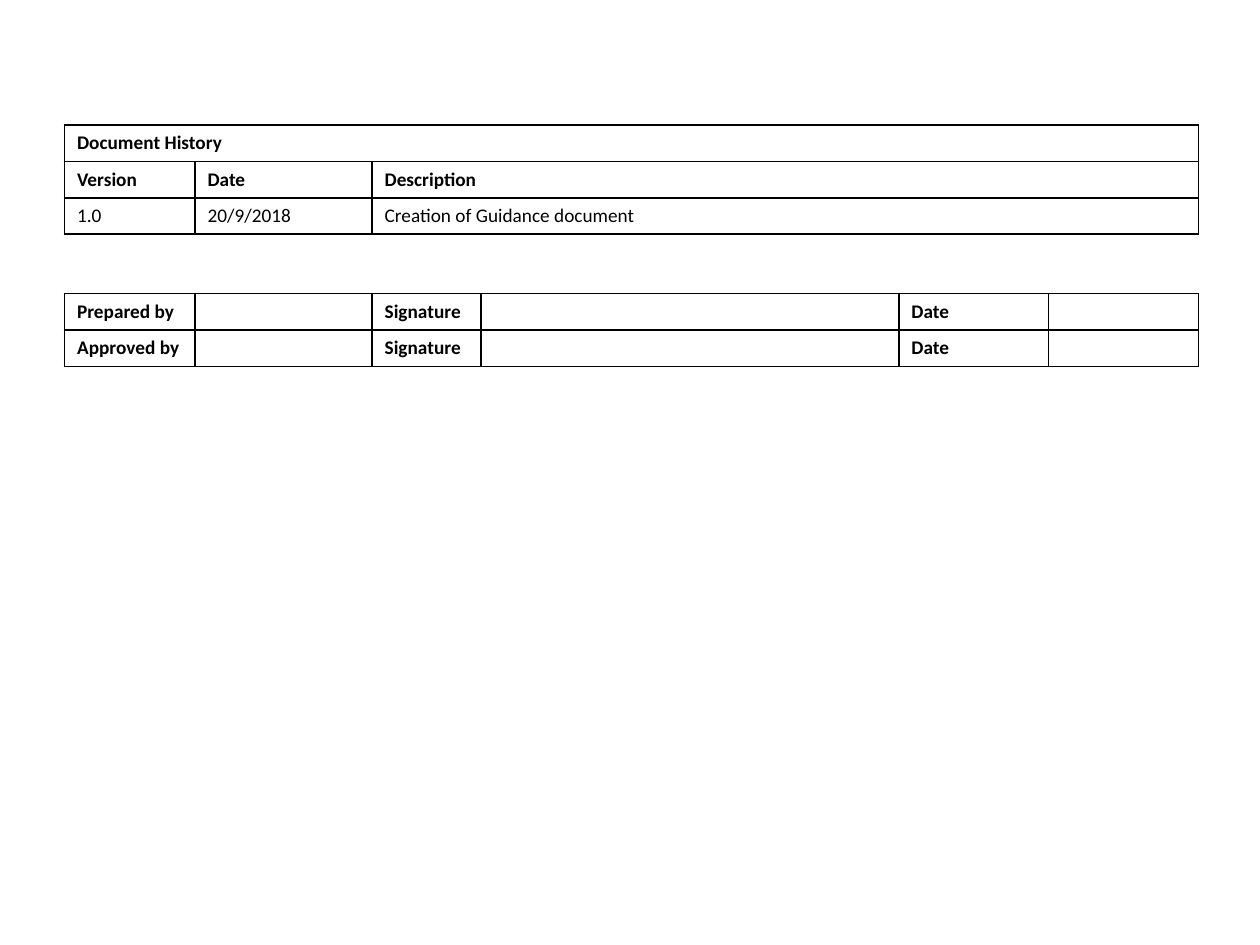
from lxml.etree import SubElement
from pptx import Presentation
from pptx.dml.color import RGBColor
from pptx.oxml.ns import qn
from pptx.util import Cm, Pt

BLACK = RGBColor(0x00, 0x00, 0x00)

LEFT = 1.3
ROW_HEIGHT = 0.73
LABEL_WIDTH, DATE_WIDTH = 2.63, 3.57

HISTORY_WIDTHS = [LABEL_WIDTH, DATE_WIDTH, 16.66]
HISTORY = [
    ["Document History", "", ""],
    ["Version", "Date", "Description"],
    ["1.0", "20/9/2018", "Creation of Guidance document"],
]
SIGN_OFF_WIDTHS = [LABEL_WIDTH, DATE_WIDTH, 2.2, 8.42, 3.02, 3.02]
SIGN_OFF = [
    [label, "", "Signature", "", "Date", ""]
    for label in ("Prepared by", "Approved by")
]


class FormSlide:
    def __init__(self, prs):
        self.s = prs.slides.add_slide(prs.slide_layouts[6])
        self.font = "Calibri"
        self.size = Pt(11)
        self.color = BLACK
        self.border = Pt(1)

    def table(self, top, widths, rows, bold_rows):
        """Add a bordered table whose first bold_rows rows are bold."""
        frame = self.s.shapes.add_table(
            len(rows), len(widths), Cm(LEFT), Cm(top),
            Cm(sum(widths)), Cm(ROW_HEIGHT * len(rows)))
        table = frame.table
        table.first_row = table.horz_banding = False
        for column, width in zip(table.columns, widths):
            column.width = Cm(width)
        for i, row in enumerate(rows):
            table.rows[i].height = Cm(ROW_HEIGHT)
            for j, text in enumerate(row):
                self.cell(table.cell(i, j), text, i < bold_rows)
        return table

    def cell(self, cell, text, bold):
        self.borders(cell)
        cell.fill.background()
        p = cell.text_frame.paragraphs[0]
        if not text:
            # An empty cell takes its line height from the end mark.
            SubElement(p._p, qn("a:endParaRPr"), sz=str(int(self.size.pt * 100)))
            return
        p.text = text
        font = p.runs[0].font
        font.name, font.size, font.bold = self.font, self.size, bold
        font.color.rgb = self.color

    def borders(self, cell):
        tcPr = cell._tc.get_or_add_tcPr()
        for side in ("lnL", "lnR", "lnT", "lnB"):
            line = SubElement(tcPr, qn(f"a:{side}"), w=str(self.border))
            fill = SubElement(line, qn("a:solidFill"))
            SubElement(fill, qn("a:srgbClr"), val=str(self.color))


def main():
    prs = Presentation()
    prs.slide_width, prs.slide_height = Cm(25.4), Cm(19.05)
    form = FormSlide(prs)
    form.table(5.92, SIGN_OFF_WIDTHS, SIGN_OFF, bold_rows=2)
    history = form.table(2.52, HISTORY_WIDTHS, HISTORY, bold_rows=2)
    history.cell(0, 0).merge(history.cell(0, 2))
    prs.save("out.pptx")


if __name__ == "__main__":
    main()
